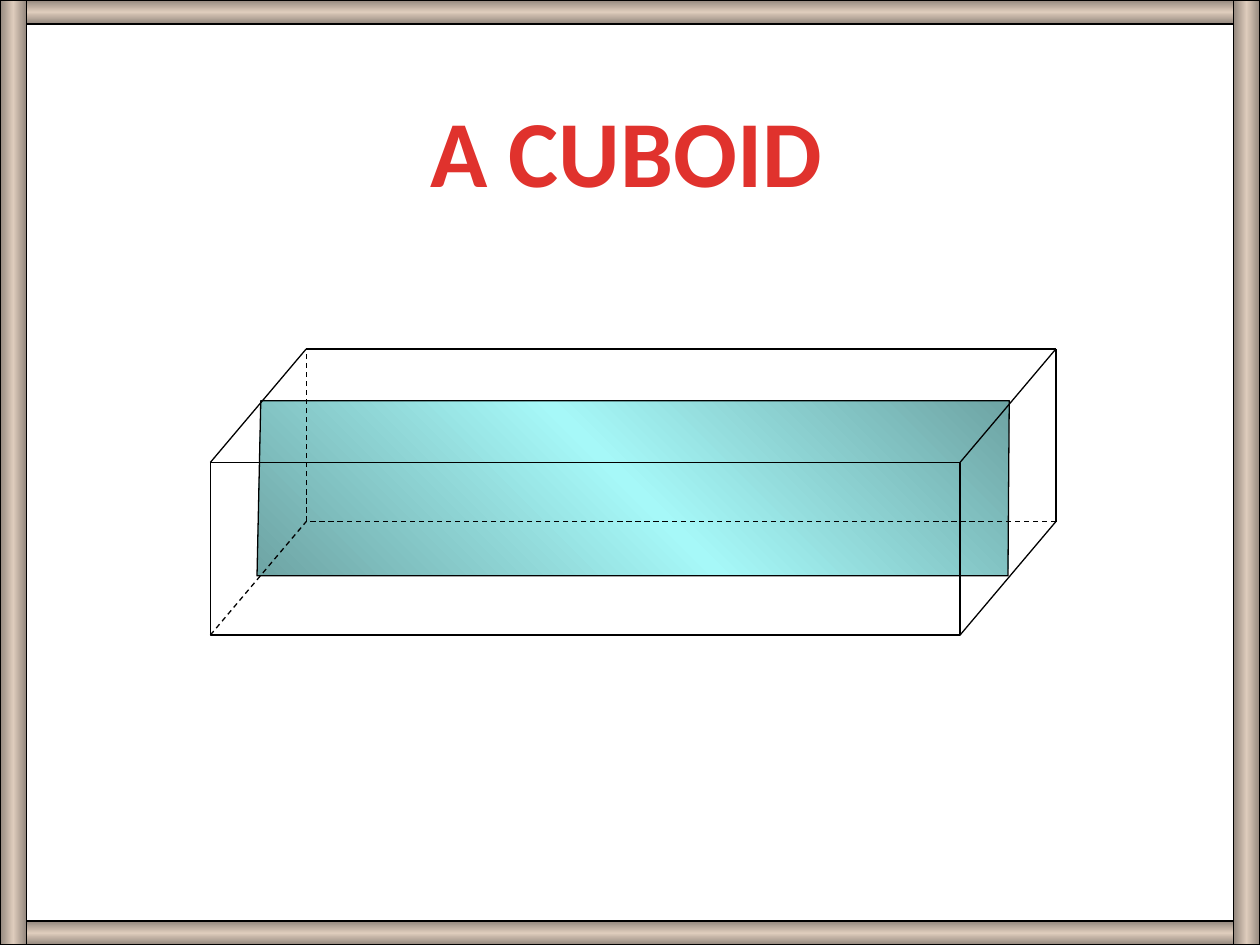
from typing import NamedTuple

from lxml import etree
from pptx import Presentation
from pptx.dml.color import RGBColor
from pptx.enum.dml import MSO_LINE
from pptx.enum.shapes import MSO_CONNECTOR, MSO_SHAPE
from pptx.enum.text import MSO_ANCHOR, PP_ALIGN
from pptx.oxml import parse_xml
from pptx.oxml.ns import nsdecls, qn
from pptx.util import Inches, Pt

RECT = MSO_SHAPE.RECTANGLE
STRAIGHT = MSO_CONNECTOR.STRAIGHT
DASH = MSO_LINE.DASH
CENTER = PP_ALIGN.CENTER
MIDDLE = MSO_ANCHOR.MIDDLE

# The slide is a grid of square cells.
COLS, ROWS = 100, 75
CELL = Inches(0.1)

BLACK, RED = "000000", "E0322D"
WOOD = ("93877D", "DECCBC")
TEAL = ("6EA4A4", "A6F8F8")


class Point(NamedTuple):
    x: float
    y: float


class Box(NamedTuple):
    x: float
    y: float
    w: float
    h: float


class Bar(NamedTuple):
    box: Box
    angle: int


class Edge(NamedTuple):
    start: Point
    end: Point
    hidden: bool = False


def cells(*counts: float) -> list[int]:
    return [round(n * CELL) for n in counts]


def color(code: str) -> RGBColor:
    return RGBColor.from_string(code)


def outline(shape, hidden: bool = False) -> None:
    shape.line.color.rgb = color(BLACK)
    shape.line.width = Pt(0.75)
    if hidden:
        shape.line.dash_style = DASH


def blend(shape, tones: tuple[str, str], angle: int) -> None:
    """Fill with a gradient from the first tone to the second and back."""
    dark, light = tones
    stops = "".join(
        f'<a:gs pos="{pos * 1000}"><a:srgbClr val="{tone}"/></a:gs>'
        for pos, tone in ((0, dark), (50, light), (100, dark))
    )
    shape.fill.background()
    props = shape.element.spPr
    props.replace(props.find(qn("a:noFill")), parse_xml(
        f'<a:gradFill {nsdecls("a")} rotWithShape="1"><a:gsLst>{stops}</a:gsLst>'
        f'<a:lin ang="{angle * 60000}" scaled="0"/></a:gradFill>'
    ))


def add_box(slide, box: Box):
    shape = slide.shapes.add_shape(RECT, *cells(*box))
    shape.shadow.inherit = False
    outline(shape)
    return shape


def add_edge(slide, edge: Edge) -> None:
    line = slide.shapes.add_connector(STRAIGHT, *cells(*edge.start, *edge.end))
    outline(line, edge.hidden)
    etree.SubElement(line.element.spPr, qn("a:effectLst"))


def add_slice(slide, points: list[Point]) -> None:
    first, *rest = [cells(*point) for point in points]
    form = slide.shapes.build_freeform(*first)
    form.add_line_segments(rest, close=True)
    shape = form.convert_to_shape()
    shape.shadow.inherit = False
    blend(shape, TEAL, 315)
    outline(shape)


def write(shape, text: str, *, font: str, size: float, tone: str, bold: bool) -> None:
    frame = shape.text_frame
    frame.word_wrap = False
    frame.vertical_anchor = MIDDLE
    line = frame.paragraphs[0]
    line.alignment = CENTER
    run = line.add_run()
    run.text = text
    run.font.name = font
    run.font.size = Pt(size)
    run.font.bold = bold
    run.font.color.rgb = color(tone)


def add_frame(slide) -> None:
    thick, wide = 1.9, 2.1
    bars = [
        Bar(Box(0, 0, COLS, thick), 90),
        Bar(Box(0, ROWS - thick, COLS, thick), 90),
        Bar(Box(0, 0, wide, ROWS), 0),
        Bar(Box(COLS - wide, 0, wide, ROWS), 0),
    ]
    for bar in bars:
        blend(add_box(slide, bar.box), WOOD, bar.angle)


def add_cuboid(slide) -> None:
    face = Box(16.7, 36.7, 59.5, 13.7)
    depth = Point(7.6, -9)
    # Corners run clockwise from the top left.
    front = [
        Point(face.x + col * face.w, face.y + row * face.h)
        for col, row in ((0, 0), (1, 0), (1, 1), (0, 1))
    ]
    back = [Point(p.x + depth.x, p.y + depth.y) for p in front]
    far = 3  # the bottom left back corner, where the hidden edges meet
    add_box(slide, face).fill.background()
    for i in range(4):
        after = (i + 1) % 4
        add_edge(slide, Edge(front[i], back[i], i == far))
        add_edge(slide, Edge(back[i], back[after], far in (i, after)))


def main() -> None:
    deck = Presentation()
    deck.slide_width, deck.slide_height = cells(COLS, ROWS)
    slide = deck.slides.add_slide(deck.slide_layouts[5])
    title = slide.shapes.title
    title.left, title.top, title.width, title.height = cells(32.7, 6.8, 34, 10.1)
    write(title, "A CUBOID", font="Calibri", size=54, tone=RED, bold=True)
    add_slice(slide, [Point(80, 45.7), Point(80.1, 31.8),
                      Point(20.7, 31.8), Point(20.4, 45.7)])
    add_frame(slide)
    add_cuboid(slide)
    deck.save("out.pptx")


if __name__ == "__main__":
    main()
